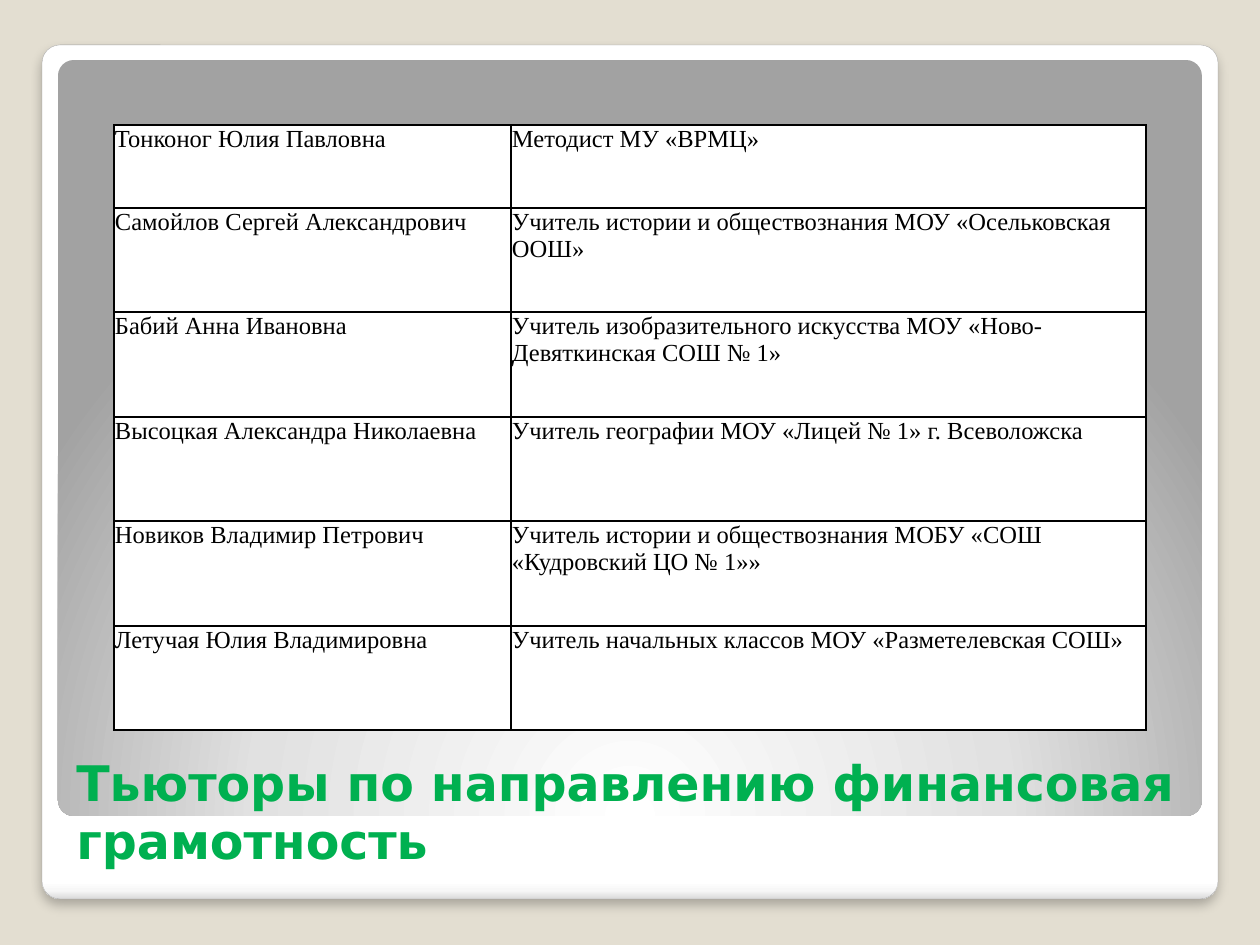
from pptx import Presentation
from pptx.dml.color import RGBColor
from pptx.enum.shapes import MSO_SHAPE
from pptx.enum.text import MSO_ANCHOR
from pptx.oxml import parse_xml
from pptx.oxml.ns import nsdecls
from pptx.util import Emu, Pt

NS = nsdecls("a")


def px(n):
    return Emu(round(n * 914400 / 126))


def color(code):
    return RGBColor.from_string(code)


class Deck:
    title_font = "DejaVu Sans"
    body_font = "Times New Roman"
    ink = "000000"
    paper = "FFFFFF"

    def __init__(self, wide, high, back):
        self.prs = Presentation()
        self.prs.slide_width, self.prs.slide_height = px(wide), px(high)
        self.slide = self.prs.slides.add_slide(self.prs.slide_layouts[6])
        fill = self.slide.background.fill
        fill.solid()
        fill.fore_color.rgb = color(back)

    def style(self, par, face, size, code, bold=False):
        font = par.font
        font.name, font.size, font.bold = face, Pt(size), bold
        font.color.rgb = color(code)

    def panel(self, box, stops, shade, edge=None, shadow=""):
        """Rounded panel with a gradient; shade is its direction as XML."""
        shape = self.slide.shapes.add_shape(
            MSO_SHAPE.ROUNDED_RECTANGLE, *map(px, box))
        shape.adjustments[0] = 0.021
        shape.shadow.inherit = False
        if edge:
            shape.line.color.rgb = color(edge)
            shape.line.width = Pt(0.16)
        else:
            shape.line.fill.background()
        marks = "".join(
            f'<a:gs pos="{at * 1000}"><a:srgbClr val="{code}"/></a:gs>'
            for at, code in stops)
        grad = parse_xml(f'<a:gradFill {NS} rotWithShape="1">'
                         f'<a:gsLst>{marks}</a:gsLst>{shade}</a:gradFill>')
        props = shape._element.spPr
        props.find("{*}prstGeom").addnext(grad)
        if shadow:
            props.find("{*}effectLst").append(parse_xml(shadow))

    def title(self, box, text):
        frame = self.slide.shapes.add_textbox(*map(px, box)).text_frame
        frame.word_wrap = True
        frame.vertical_anchor = MSO_ANCHOR.BOTTOM
        frame.text = text
        self.style(frame.paragraphs[0], self.title_font, 28, "00B050", True)

    def border(self, cell):
        props = cell._tc.get_or_add_tcPr()
        for side in "LRTB":
            props.append(parse_xml(
                f'<a:ln{side} {NS} w="12700"><a:solidFill>'
                f'<a:srgbClr val="{self.ink}"/></a:solidFill></a:ln{side}>'))

    def table(self, cols, rows, data):
        """Table whose grid lines lie at the given x and y edges."""
        grid = self.slide.shapes.add_table(
            len(data), len(data[0]), px(cols[0]), px(rows[0]),
            px(cols[-1] - cols[0]), px(rows[-1] - rows[0])).table
        grid.first_row = grid.horz_banding = False
        for col, left, right in zip(grid.columns, cols, cols[1:]):
            col.width = px(right - left)
        for row, top, low, texts in zip(grid.rows, rows, rows[1:], data):
            row.height = px(low - top)
            for cell, text in zip(row.cells, texts):
                cell.text = text
                cell.margin_left = cell.margin_right = px(1)
                cell.margin_top = cell.margin_bottom = px(1)
                self.style(cell.text_frame.paragraphs[0],
                           self.body_font, 14, self.ink)
                self.border(cell)
                cell.fill.solid()
                cell.fill.fore_color.rgb = color(self.paper)


TUTORS = [
    ("Тонконог Юлия Павловна", "Методист МУ «ВРМЦ»"),
    ("Самойлов Сергей Александрович",
     "Учитель истории и обществознания МОУ «Осельковская ООШ»"),
    ("Бабий Анна Ивановна",
     "Учитель изобразительного искусства МОУ «Ново-Девяткинская СОШ № 1»"),
    ("Высоцкая Александра Николаевна",
     "Учитель географии МОУ «Лицей № 1» г. Всеволожска"),
    ("Новиков Владимир Петрович",
     "Учитель истории и обществознания МОБУ «СОШ «Кудровский ЦО № 1»»"),
    ("Летучая Юлия Владимировна",
     "Учитель начальных классов МОУ «Разметелевская СОШ»"),
]


def main():
    deck = Deck(1260, 945, "E3DED1")

    # White frame with a soft shadow
    deck.panel(
        (42, 45, 1176, 854),
        [(0, "FFFFFF"), (98, "FFFFFF"), (99, "F7F7F7"), (100, "DADADA")],
        '<a:lin ang="5400000" scaled="0"/>', edge="A4A4A4",
        shadow=f'<a:outerShdw {NS} blurRad="76200" dist="50800" dir="5400000" '
               'algn="tl" rotWithShape="0"><a:srgbClr val="000000">'
               '<a:alpha val="25000"/></a:srgbClr></a:outerShdw>')

    # Grey panel lit from below
    deck.panel(
        (58, 60, 1144, 756),
        [(0, "FFFFFF"), (55, "E1E1E1"), (100, "A2A2A2")],
        '<a:path path="circle"><a:fillToRect l="50000" t="175000" '
        'r="50000" b="-75000"/></a:path>')

    # Title
    deck.title((64, 731, 1128, 145),
               "Тьюторы по направлению финансовая грамотность")

    # Tutors: a short first row, then equal rows
    rows = [125] + [round(208 + 104.4 * n) for n in range(len(TUTORS))]
    deck.table([114, 511, 1146], rows, TUTORS)

    deck.prs.save("out.pptx")


if __name__ == "__main__":
    main()
